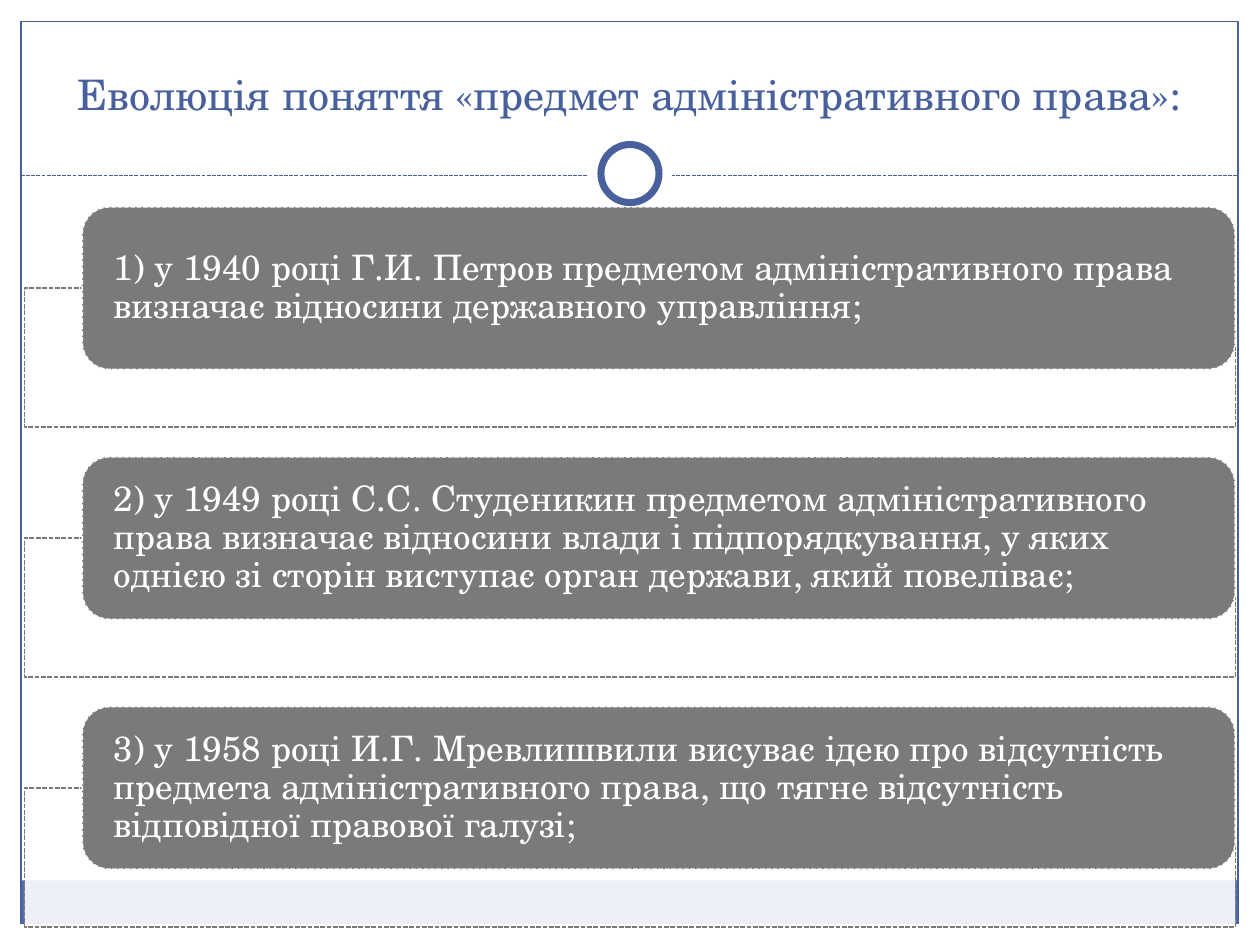
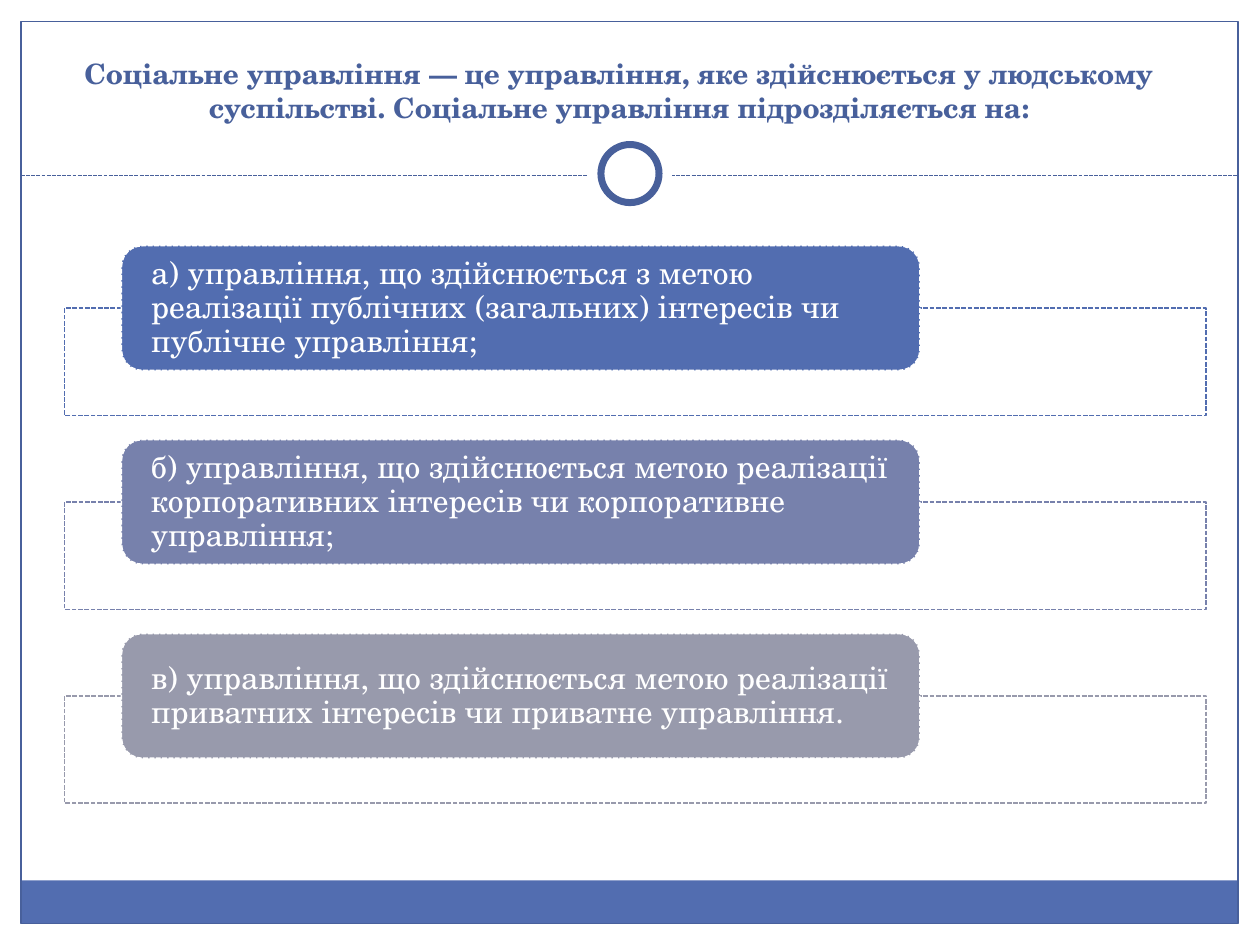
from pptx import Presentation
from pptx.dml.color import RGBColor
from pptx.enum.dml import MSO_LINE
from pptx.enum.shapes import MSO_CONNECTOR, MSO_SHAPE
from pptx.enum.text import MSO_ANCHOR, MSO_AUTO_SIZE, PP_ALIGN
from pptx.oxml.ns import qn
from pptx.util import Pt
from lxml.etree import SubElement

WHITE = RGBColor(0xFF, 0xFF, 0xFF)
NAVY = RGBColor(0x48, 0x60, 0x9B)
BLUE = RGBColor(0x52, 0x6D, 0xB0)
MAUVE = RGBColor(0x77, 0x81, 0xAC)
SILVER = RGBColor(0x98, 0x9A, 0xAC)
GRAY = RGBColor(0x7A, 0x7A, 0x7A)
FONT = "TeX Gyre Schola"

SLIDES = [
    {
        "title": "Еволюція поняття «предмет адміністративного права»:",
        "title_box": (36, 21.6, 647.3, 49.7), "title_size": 24, "bold": False,
        "items": [
            ("1) у 1940 році Г.И. Петров предметом адміністративного права "
             "визначає відносини державного управління;", GRAY),
            ("2) у 1949 році С.С. Студеникин предметом адміністративного права "
             "визначає відносини влади і підпорядкування, у яких однією зі сторін "
             "виступає орган держави, який повеліває;", GRAY),
            ("3) у 1958 році И.Г. Мревлишвили висуває ідею про відсутність предмета "
             "адміністративного права, що тягне відсутність відповідної правової галузі;", GRAY),
        ],
        "size": 20, "top": 118.2, "step": 142.8,
        "card": (47, 658.8, 92.9), "frame": (14, 691.9, 79.4), "inset": 18,
    },
    {
        "title": "Соціальне управління — це управління, яке здійснюється у людському "
                 "суспільстві. Соціальне управління підрозділяється на:",
        "title_box": (36, 25.9, 635.8, 48.5), "title_size": 16, "bold": True,
        "items": [
            ("а) управління, що здійснюється з метою реалізації публічних "
             "(загальних) інтересів чи публічне управління;", BLUE),
            ("б) управління, що здійснюється метою реалізації корпоративних "
             "інтересів чи корпоративне управління;", MAUVE),
            ("в) управління, що здійснюється метою реалізації приватних "
             "інтересів чи приватне управління.", SILVER),
        ],
        "size": 18, "top": 140.4, "step": 110.8,
        "card": (69.4, 456.3, 71.3), "frame": (36.9, 652.1, 61.4), "inset": 17,
    },
]


def add_shape(s, kind, box, fill=None, line=None, width=0.75, dash=None):
    sp = s.shapes.add_shape(kind, *map(Pt, box))
    sp.shadow.inherit = False
    if fill is None:
        sp.fill.background()
    else:
        sp.fill.solid()
        sp.fill.fore_color.rgb = fill
    if line is None:
        sp.line.fill.background()
    else:
        sp.line.color.rgb = line
        sp.line.width = Pt(width)
        sp.line.dash_style = dash
    return sp


def add_backdrop(s):
    add_shape(s, MSO_SHAPE.RECTANGLE, (11.8, 503.1, 695.5, 24.5), BLUE)
    add_shape(s, MSO_SHAPE.RECTANGLE, (12, 12.2, 695.5, 515.5), line=NAVY)
    rule = s.shapes.add_connector(MSO_CONNECTOR.STRAIGHT, Pt(12), Pt(100.5), Pt(707.5), Pt(100.5))
    rule.line.color.rgb = NAVY
    rule.line.width = Pt(0.75)
    rule.line.dash_style = MSO_LINE.SQUARE_DOT
    SubElement(rule._element.spPr, qn("a:effectLst"))
    for diameter, line in ((48, None), (33.2, NAVY)):
        box = (360 - diameter / 2, 99.2 - diameter / 2, diameter, diameter)
        add_shape(s, MSO_SHAPE.OVAL, box, WHITE, line, 4)


def style_paragraph(p, size, color, align, bold=False):
    p.alignment = align
    p.font.name = FONT
    p.font.size = Pt(size)
    p.font.bold = bold
    p.font.color.rgb = color


def set_title(s, content):
    title = s.shapes.title
    title.left, title.top, title.width, title.height = map(Pt, content["title_box"])
    tf = title.text_frame
    tf.text = content["title"]
    tf.word_wrap = True
    tf.auto_size = MSO_AUTO_SIZE.NONE
    tf.vertical_anchor = MSO_ANCHOR.BOTTOM
    tf.margin_left = tf.margin_right = Pt(4)
    style_paragraph(tf.paragraphs[0], content["title_size"], NAVY, PP_ALIGN.CENTER, content["bold"])


def add_item(s, content, index):
    text, color = content["items"][index]
    left, width, height = content["card"]
    frame_left, frame_width, frame_height = content["frame"]
    top = content["top"] + index * content["step"]

    frame_box = (frame_left, top + height / 2, frame_width, frame_height)
    frame = add_shape(s, MSO_SHAPE.RECTANGLE, frame_box, WHITE, color, 0.9, MSO_LINE.SQUARE_DOT)
    fill_color = frame._element.spPr.find(qn("a:solidFill"))[0]
    SubElement(fill_color, qn("a:alpha"), val="90000")

    card = add_shape(s, MSO_SHAPE.ROUNDED_RECTANGLE, (left, top, width, height),
                     color, WHITE, 0.9, MSO_LINE.SQUARE_DOT)
    corner_inset = height / 6 * 0.29
    tf = card.text_frame
    tf.text = text
    tf.word_wrap = True
    tf.vertical_anchor = MSO_ANCHOR.MIDDLE
    tf.margin_left = Pt(content["inset"] - corner_inset)
    tf.margin_right = Pt(content["inset"] - corner_inset - 1)
    tf.margin_top = tf.margin_bottom = 0
    p = tf.paragraphs[0]
    p.line_spacing = 0.9
    style_paragraph(p, content["size"], WHITE, PP_ALIGN.LEFT)


def main():
    prs = Presentation()
    prs.slide_width, prs.slide_height = Pt(720), Pt(540)
    for content in SLIDES:
        s = prs.slides.add_slide(prs.slide_layouts[5])
        add_backdrop(s)
        set_title(s, content)
        for index in range(len(content["items"])):
            add_item(s, content, index)
    prs.save("out.pptx")


if __name__ == "__main__":
    main()
